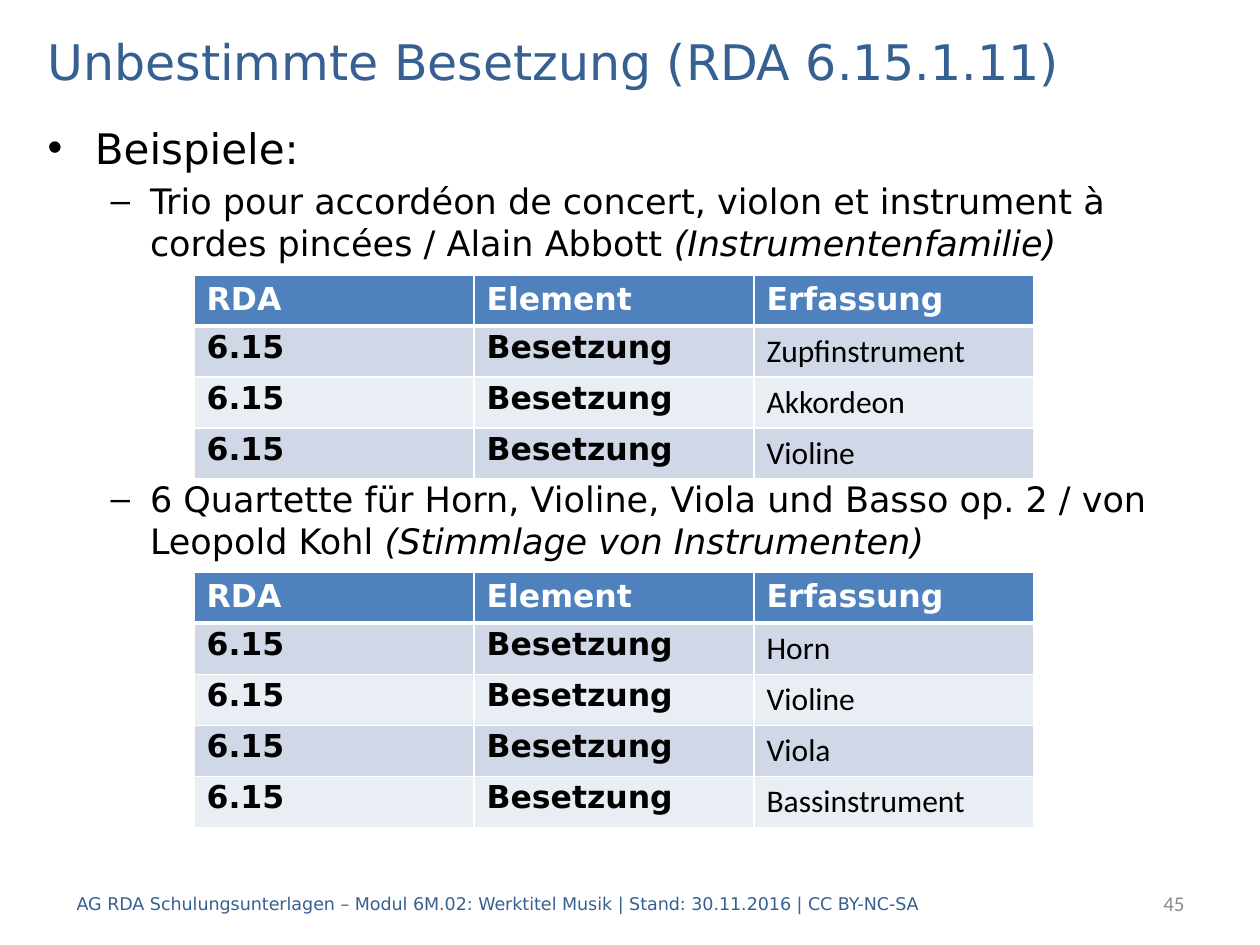
from lxml.etree import SubElement
from pptx import Presentation
from pptx.dml.color import RGBColor
from pptx.enum.text import MSO_ANCHOR, MSO_AUTO_SIZE, PP_ALIGN
from pptx.oxml.ns import qn
from pptx.util import Pt

HEADER = ("RDA", "Element", "Erfassung")
TRIO = ("Zupfinstrument", "Akkordeon", "Violine")
QUARTET = ("Horn", "Violine", "Viola", "Bassinstrument")


def color(hex_string):
    return RGBColor.from_string(hex_string)


def add_text(paragraph, text, size=18, font="DejaVu Sans", fill="000000",
             bold=False, italic=False):
    run = paragraph.add_run()
    run.text = text
    run.font.size = Pt(size)
    run.font.name = font
    run.font.bold = bold
    run.font.italic = italic
    run.font.color.rgb = color(fill)


class SlideBuilder:
    """Holds the style and the current slide."""
    blue = "376092"
    gray = "8C8C8C"
    white = "FFFFFF"
    header_fill = "4F81BD"
    band_fills = ("D0D8E8", "E9EDF4")
    column_width = 160
    row_height = 29.2

    def __init__(self, presentation):
        self.slide = presentation.slides.add_slide(presentation.slide_layouts[1])

    def place(self, shape, left, top, width, height):
        shape.left, shape.top = Pt(left), Pt(top)
        shape.width, shape.height = Pt(width), Pt(height)

    def title(self, text, *box):
        shape = self.slide.shapes.title
        self.place(shape, *box)
        frame = shape.text_frame
        frame.auto_size = MSO_AUTO_SIZE.NONE
        frame.vertical_anchor = MSO_ANCHOR.MIDDLE
        paragraph = frame.paragraphs[0]
        paragraph.alignment = PP_ALIGN.LEFT
        add_text(paragraph, text, size=28, fill=self.blue)

    def body(self, items, *box):
        """Each item is level, space before (None inherits), text, italic text."""
        shape = self.slide.placeholders[1]
        self.place(shape, *box)
        frame = shape.text_frame
        frame.auto_size = MSO_AUTO_SIZE.NONE
        for index, (level, space, text, italic_text) in enumerate(items):
            paragraph = frame.add_paragraph() if index else frame.paragraphs[0]
            paragraph.level = level
            if space is not None:
                paragraph.space_before = Pt(space)
            margin, hanging, size, bullet = ((27, 27, 24, "•"), (58.5, 22.5, 20, "–"))[level]
            properties = paragraph._p.get_or_add_pPr()
            properties.set("marL", str(Pt(margin)))
            properties.set("indent", str(-Pt(hanging)))
            SubElement(properties, qn("a:buChar")).set("char", bullet)
            add_text(paragraph, text, size=size)
            if italic_text:
                add_text(paragraph, italic_text, size=size, italic=True)

    def borders(self, cell, **widths):
        """Draw white borders; widths override the 1 pt default by side."""
        properties = cell._tc.get_or_add_tcPr()
        for position, side in enumerate("LRTB"):
            line = properties.makeelement(qn(f"a:ln{side}"), {"w": str(Pt(widths.get(side, 1)))})
            fill = SubElement(line, qn("a:solidFill"))
            SubElement(fill, qn("a:srgbClr")).set("val", self.white)
            properties.insert(position, line)

    def table(self, values, left, top):
        rows = [HEADER] + [("6.15", "Besetzung", value) for value in values]
        frame = self.slide.shapes.add_table(
            len(rows), len(HEADER), Pt(left), Pt(top),
            Pt(self.column_width * len(HEADER)), Pt(self.row_height * len(rows)))
        table = frame.table
        for column in table.columns:
            column.width = Pt(self.column_width)
        for row_index, row in enumerate(rows):
            table.rows[row_index].height = Pt(self.row_height)
            for column_index, text in enumerate(row):
                self.cell(table.cell(row_index, column_index), text, row_index, column_index)

    def cell(self, cell, text, row_index, column_index):
        paragraph = cell.text_frame.paragraphs[0]
        cell.fill.solid()
        if row_index == 0:
            cell.fill.fore_color.rgb = color(self.header_fill)
            add_text(paragraph, text, fill=self.white, bold=True)
            self.borders(cell, B=3)
            return
        cell.fill.fore_color.rgb = color(self.band_fills[(row_index - 1) % 2])
        self.borders(cell, T=3 if row_index == 1 else 1)
        if column_index == 2:
            add_text(paragraph, text, font="Calibri")
        else:
            cell.vertical_anchor = MSO_ANCHOR.MIDDLE
            paragraph.line_spacing = Pt(16)
            paragraph.space_before = paragraph.space_after = Pt(6)
            add_text(paragraph, text, bold=True)

    def footer(self, text, *box, alignment=PP_ALIGN.LEFT, **text_format):
        shape = self.slide.shapes.add_textbox(*map(Pt, box))
        frame = shape.text_frame
        frame.word_wrap = True
        frame.vertical_anchor = MSO_ANCHOR.MIDDLE
        frame.paragraphs[0].alignment = alignment
        add_text(frame.paragraphs[0], text, **text_format)


def main():
    presentation = Presentation()
    presentation.slide_width, presentation.slide_height = Pt(720), Pt(540)
    builder = SlideBuilder(presentation)

    # Title and examples; the last item leaves room for the first table
    builder.title("Unbestimmte Besetzung (RDA 6.15.1.11)", 20, 14.4, 680, 40.3)
    builder.body([
        (0, None, "Beispiele:", ""),
        (1, None, "Trio pour accordéon de concert, violon et instrument à cordes "
                  "pincées / Alain Abbott ", "(Instrumentenfamilie)"),
        (1, 122, "6 Quartette für Horn, Violine, Viola und Basso op. 2 / von "
                 "Leopold Kohl ", "(Stimmlage von Instrumenten)"),
    ], 20, 66.2, 680, 430.6)

    # Tables
    builder.table(TRIO, 110.9, 157)
    builder.table(QUARTET, 110.9, 326.9)

    # Footer and slide number
    builder.footer("AG RDA Schulungsunterlagen – Modul 6M.02: Werktitel Musik | "
                   "Stand: 30.11.2016 | CC BY-NC-SA",
                   36.7, 501.8, 561.6, 28.8, size=10, fill=builder.blue)
    builder.footer("45", 569.5, 501.8, 114.5, 28.8, alignment=PP_ALIGN.RIGHT,
                   size=12, font="Calibri", fill=builder.gray)

    presentation.save("out.pptx")


if __name__ == "__main__":
    main()
